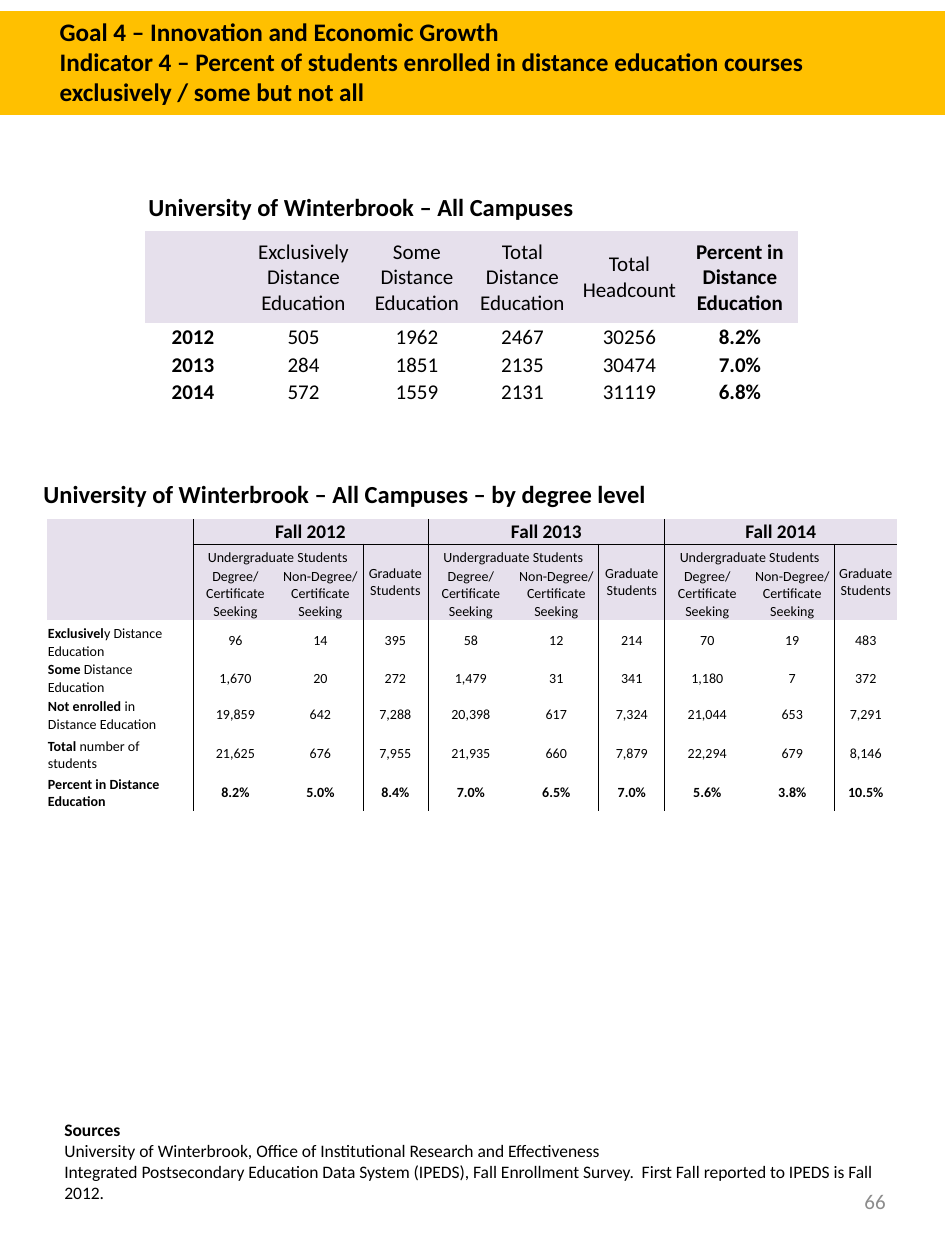
from dataclasses import dataclass

from lxml import etree
from pptx import Presentation
from pptx import util as u
from pptx.dml.color import RGBColor
from pptx.enum import shapes, text
from pptx.oxml import ns

TITLE = ("Goal 4 – Innovation and Economic Growth\n"
         "Indicator 4 – Percent of students enrolled in distance education courses "
         "exclusively / some but not all")
CAMPUS_HEADING = "University of Winterbrook – All Campuses"
DEGREE_HEADING = "University of Winterbrook – All Campuses – by degree level"
SOURCES = [
    [("Sources", True)],
    [("University of Winterbrook, Office of Institutional Research and Effectiveness", False)],
    [("Integrated Postsecondary Education Data System (IPEDS), Fall Enrollment Survey.  "
      "First Fall reported to IPEDS is Fall 2012.", False)],
]
PAGE_NUMBER = "66"

CAMPUS_ROWS = [
    ("", "Exclusively Distance Education", "Some Distance Education",
     "Total Distance Education", "Total Headcount", "Percent in Distance Education"),
    ("2012", "505", "1962", "2467", "30256", "8.2%"),
    ("2013", "284", "1851", "2135", "30474", "7.0%"),
    ("2014", "572", "1559", "2131", "31119", "6.8%"),
]
TERMS = ["Fall 2012", "Fall 2013", "Fall 2014"]
UNDERGRADUATE = "Undergraduate Students"
GRADUATE = "Graduate Students"
SEEKING = ["Degree/\nCertificate Seeking", "Non-Degree/ Certificate Seeking"]
DEGREE_ROWS = [
    ([[("Exclusivel", True), ("y Distance Education", False)]],
     ["96", "14", "395", "58", "12", "214", "70", "19", "483"]),
    ([[("Some", True), (" Distance Education", False)]],
     ["1,670", "20", "272", "1,479", "31", "341", "1,180", "7", "372"]),
    ([[("Not enrolled", True), (" in", False)], [("Distance Education", False)]],
     ["19,859", "642", "7,288", "20,398", "617", "7,324", "21,044", "653", "7,291"]),
    ([[("Total", True), (" number of students", False)]],
     ["21,625", "676", "7,955", "21,935", "660", "7,879", "22,294", "679", "8,146"]),
    ([[("Percent in Distance Education", True)]],
     ["8.2%", "5.0%", "8.4%", "7.0%", "6.5%", "7.0%", "5.6%", "3.8%", "10.5%"]),
]

CAMPUS_COLS, CAMPUS_HEIGHTS = [96, 125, 102, 109, 105, 116], [92, 27, 28, 27]
DEGREE_COLS = [146, 85, 85, 65, 86, 85, 66, 85, 85, 62]
DEGREE_HEIGHTS = [25, 22, 54, 40, 36, 37, 40, 38]
HEADER_DEPTH = 3
NO_STYLE = "{2D5ABB26-0587-4C30-8999-92F81FD0307C}"


@dataclass(frozen=True)
class Theme:
    font: str = "Calibri"
    ink: str = "000000"
    banner: str = "FFC000"
    header: str = "E6E0EC"
    muted: str = "8C8C8C"
    title: float = 14.4
    heading: float = 14
    campus: float = 12
    term: float = 11
    degree: float = 8
    source: float = 10
    page: float = 12
    rule: float = 0.5


THEME = Theme()
LEFT, CENTER, RIGHT = text.PP_ALIGN.LEFT, text.PP_ALIGN.CENTER, text.PP_ALIGN.RIGHT
TOP, MIDDLE, BOTTOM = text.MSO_ANCHOR.TOP, text.MSO_ANCHOR.MIDDLE, text.MSO_ANCHOR.BOTTOM


def px(length):
    return u.Emu(round(length * 914400 / 126))


def write(frame, paragraphs, size, align=LEFT, color=THEME.ink):
    for index, runs in enumerate(paragraphs):
        paragraph = frame.add_paragraph() if index else frame.paragraphs[0]
        paragraph.alignment = align
        for words, bold in runs:
            for part, line in enumerate(words.split("\n")):
                if part:
                    paragraph.add_line_break()
                run = paragraph.add_run()
                run.text = line
                run.font.name = THEME.font
                run.font.size = u.Pt(size)
                run.font.bold = bold
                run.font.color.rgb = RGBColor.from_string(color)


def add_text(slide, box, paragraphs, size, align=LEFT, anchor=TOP, color=THEME.ink):
    frame = slide.shapes.add_textbox(*map(px, box)).text_frame
    frame.word_wrap = True
    frame.vertical_anchor = anchor
    write(frame, paragraphs, size, align, color)


def add_grid(slide, left, top, widths, heights, header_rows):
    box = map(px, (left, top, sum(widths), sum(heights)))
    grid = slide.shapes.add_table(len(heights), len(widths), *box).table
    grid.first_row = grid.horz_banding = False
    grid._tbl.tblPr.find(ns.qn("a:tableStyleId")).text = NO_STYLE
    for column, width in zip(grid.columns, widths):
        column.width = px(width)
    for r, height in enumerate(heights):
        grid.rows[r].height = px(height)
        for cell in grid.rows[r].cells:
            cell.margin_left = cell.margin_right = cell.margin_top = px(1)
            cell.margin_bottom = 0
            if r < header_rows:
                cell.fill.solid()
                cell.fill.fore_color.rgb = RGBColor.from_string(THEME.header)
            else:
                cell.fill.background()
    return grid


def put(cell, paragraphs, size, align=CENTER, anchor=MIDDLE):
    cell.vertical_anchor = anchor
    write(cell.text_frame, paragraphs, size, align)


def set_borders(cell, sides):
    for index, side in enumerate("LRTB"):
        line = etree.Element(ns.qn("a:ln" + side), w=str(u.Pt(THEME.rule)))
        if side in sides:
            fill = etree.SubElement(line, ns.qn("a:solidFill"))
            etree.SubElement(fill, ns.qn("a:srgbClr"), val=THEME.ink)
        else:
            etree.SubElement(line, ns.qn("a:noFill"))
        cell._tc.get_or_add_tcPr().insert(index, line)


def add_campus_table(slide):
    grid = add_grid(slide, 145, 231, CAMPUS_COLS, CAMPUS_HEIGHTS, 1)
    last = len(CAMPUS_COLS) - 1
    for r, values in enumerate(CAMPUS_ROWS):
        for c, value in enumerate(values):
            if value:
                put(grid.cell(r, c), [[(value, c in (0, last))]], THEME.campus,
                    anchor=BOTTOM if r else MIDDLE)


def add_degree_table(slide):
    grid = add_grid(slide, 47, 519, DEGREE_COLS, DEGREE_HEIGHTS, HEADER_DEPTH)
    grid.cell(0, 0).merge(grid.cell(2, 0))
    for index, term in enumerate(TERMS):
        c = 1 + 3 * index
        grid.cell(0, c).merge(grid.cell(0, c + 2))
        grid.cell(1, c).merge(grid.cell(1, c + 1))
        grid.cell(1, c + 2).merge(grid.cell(2, c + 2))
        put(grid.cell(0, c), [[(term, True)]], THEME.term, anchor=BOTTOM)
        put(grid.cell(1, c), [[(UNDERGRADUATE, False)]], THEME.degree, anchor=BOTTOM)
        put(grid.cell(1, c + 2), [[(GRADUATE, False)]], THEME.degree)
        for offset, label in enumerate(SEEKING):
            put(grid.cell(2, c + offset), [[(label, False)]], THEME.degree, anchor=BOTTOM)
    for r, (label, values) in enumerate(DEGREE_ROWS, HEADER_DEPTH):
        put(grid.cell(r, 0), label, THEME.degree, LEFT, BOTTOM)
        for c, value in enumerate(values, 1):
            put(grid.cell(r, c), [[(value, r == len(DEGREE_HEIGHTS) - 1)]], THEME.degree)

    def ruled(r, c):
        return 0 < c < len(DEGREE_COLS) and (c % 3 == 1 or (c % 3 == 0 and r > 0))

    for r in range(len(DEGREE_HEIGHTS)):
        for c in range(len(DEGREE_COLS)):
            cell = grid.cell(r, c)
            right_edge = c + (cell.span_width if cell.is_merge_origin else 1)
            sides = "L" * ruled(r, c) + "R" * ruled(r, right_edge)
            if c:
                sides += {0: "B", 1: "T"}.get(r, "")
            set_borders(cell, sides)


def main():
    deck = Presentation()
    deck.slide_width, deck.slide_height = px(945), px(1260)
    slide = deck.slides.add_slide(deck.slide_layouts[5])

    title = slide.shapes.title
    title.left, title.top, title.width, title.height = map(px, (47, 7, 850, 109))
    title.text_frame.auto_size = text.MSO_AUTO_SIZE.NONE
    title.text_frame.word_wrap = True
    title.text_frame.vertical_anchor = MIDDLE
    write(title.text_frame, [[(TITLE, True)]], THEME.title)

    banner = slide.shapes.add_shape(shapes.MSO_SHAPE.RECTANGLE, *map(px, (0, 11, 945, 104)))
    banner.shadow.inherit = False
    banner.fill.solid()
    banner.fill.fore_color.rgb = RGBColor.from_string(THEME.banner)
    banner.line.fill.background()
    title.element.addprevious(banner.element)

    add_text(slide, (52, 1113, 854, 118), SOURCES, THEME.source)
    add_text(slide, (678, 1168, 220, 67), [[(PAGE_NUMBER, False)]], THEME.page,
             RIGHT, MIDDLE, THEME.muted)
    add_text(slide, (136, 186, 735, 43), [[(CAMPUS_HEADING, True)]], THEME.heading)
    add_campus_table(slide)
    add_text(slide, (31, 473, 735, 43), [[(DEGREE_HEADING, True)]], THEME.heading)
    add_degree_table(slide)
    deck.save("out.pptx")


if __name__ == "__main__":
    main()
